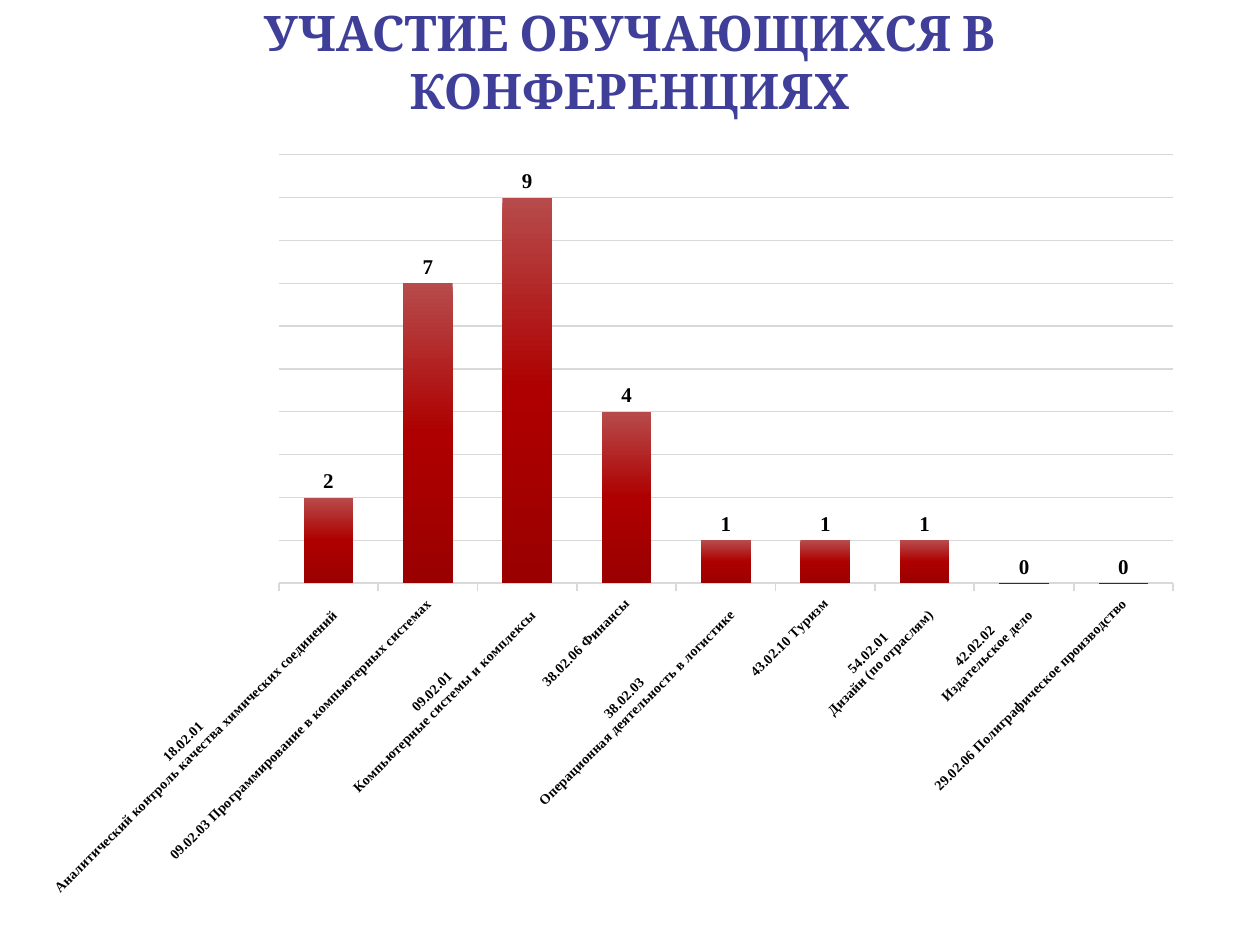
from dataclasses import dataclass

from lxml import etree
from pptx import Presentation
from pptx import util as u
from pptx.chart.data import CategoryChartData
from pptx.dml.color import RGBColor
from pptx.enum import chart as c
from pptx.enum import text as t
from pptx.oxml import parse_xml
from pptx.oxml.ns import nsdecls, qn

TITLE_COLOR = RGBColor(0x3F, 0x3F, 0x9A)
TITLE_OUTLINE = RGBColor(0xA5, 0x85, 0xB1)
GRID = RGBColor(0xD9, 0xD9, 0xD9)
BLACK = RGBColor(0, 0, 0)
BAR_STOPS = (
    (0, RGBColor(0xB7, 0x4B, 0x4B)),
    (50, RGBColor(0xAE, 0x00, 0x00)),
    (100, RGBColor(0x9B, 0x00, 0x00)),
)
CHART_FONT = "Times New Roman"
CHART_WIDTH = u.Cm(23.8)
CHART_HEIGHT = u.Cm(15.54)


@dataclass(frozen=True)
class Specialty:
    name: str
    entries: int


SPECIALTIES = (
    Specialty("18.02.01 \nАналитический контроль качества химических соединений", 2),
    Specialty("09.02.03 Программирование в компьютерных системах", 7),
    Specialty("09.02.01 \nКомпьютерные системы и комплексы", 9),
    Specialty("38.02.06 Финансы", 4),
    Specialty("38.02.03 \nОперационная деятельность в логистике", 1),
    Specialty("43.02.10 Туризм", 1),
    Specialty("54.02.01 \nДизайн (по отраслям)", 1),
    Specialty("42.02.02 \nИздательское дело", 0),
    Specialty("29.02.06 Полиграфическое производство", 0),
)


def style_font(font, size: float, name: str, color: RGBColor) -> None:
    font.size = u.Pt(size)
    font.name = name
    font.bold = True
    font.color.rgb = color


def add_title(page, text: str) -> None:
    box = page.shapes.add_textbox(u.Cm(1.26), u.Cm(-0.36), u.Cm(22.86), u.Cm(3.18))
    frame = box.text_frame
    frame.word_wrap = True
    frame.vertical_anchor = t.MSO_ANCHOR.MIDDLE
    para = frame.paragraphs[0]
    para.alignment = t.PP_ALIGN.CENTER
    span = para.add_run()
    span.text = text
    style_font(span.font, 28, "Cambria", TITLE_COLOR)
    outline = parse_xml(
        f'<a:ln {nsdecls("a")} w="{u.Pt(2.25)}"><a:solidFill>'
        f'<a:srgbClr val="{TITLE_OUTLINE}"/></a:solidFill></a:ln>'
    )
    span.font._element.insert(0, outline)


def place_plot(chart, left: u.Length, top: u.Length, width: u.Length, height: u.Length) -> None:
    area = chart._chartSpace.find(f'.//{qn("c:plotArea")}')
    for old in area.findall(qn("c:layout")):
        area.remove(old)
    layout = etree.Element(qn("c:layout"))
    manual = etree.SubElement(layout, qn("c:manualLayout"))
    settings = dict(
        layoutTarget="inner", xMode="edge", yMode="edge",
        x=left / CHART_WIDTH, y=top / CHART_HEIGHT,
        w=width / CHART_WIDTH, h=height / CHART_HEIGHT,
    )
    for tag, value in settings.items():
        etree.SubElement(manual, qn(f"c:{tag}")).set("val", str(value))
    area.insert(0, layout)


def fill_gradient(fill, stops: tuple, angle: int) -> None:
    fill.gradient()
    gradient = fill._fill._gradFill
    stop_list = gradient.find(qn("a:gsLst"))
    for old in list(stop_list):
        stop_list.remove(old)
    for percent, color in stops:
        stop = etree.SubElement(stop_list, qn("a:gs"), pos=str(percent * 1000))
        etree.SubElement(stop, qn("a:srgbClr"), val=str(color))
    gradient.find(qn("a:lin")).set("ang", str(angle * 60000))


def style_axes(chart) -> None:
    categories = chart.category_axis
    categories.major_tick_mark = c.XL_TICK_MARK.OUTSIDE
    categories.has_major_gridlines = False
    categories.format.line.color.rgb = GRID
    categories.format.line.width = u.Pt(1)
    style_font(categories.tick_labels.font, 8, CHART_FONT, BLACK)
    body = categories._element.find(f'{qn("c:txPr")}/{qn("a:bodyPr")}')
    body.set("rot", str(-45 * 60000))
    body.set("vert", "horz")

    values = chart.value_axis
    values.minimum_scale = 0
    values.maximum_scale = 10
    values.major_unit = 1
    values.has_major_gridlines = True
    values.major_gridlines.format.line.color.rgb = GRID
    values.major_gridlines.format.line.width = u.Pt(0.75)
    values.visible = False


def add_column_chart(page, specialties: tuple[Specialty, ...]) -> None:
    data = CategoryChartData()
    data.categories = [item.name for item in specialties]
    data.add_series("Series 1", [item.entries for item in specialties])
    chart = page.shapes.add_chart(
        c.XL_CHART_TYPE.COLUMN_CLUSTERED,
        u.Cm(0.33), u.Cm(2.82), CHART_WIDTH, CHART_HEIGHT, data,
    ).chart
    chart.has_title = False
    chart.has_legend = False
    style_font(chart.font, 10, CHART_FONT, BLACK)
    place_plot(chart, u.Cm(5.29), u.Cm(0.3), u.Cm(18.03), u.Cm(8.64))
    style_axes(chart)

    plot = chart.plots[0]
    plot.vary_by_categories = False
    plot.gap_width = 100
    plot.overlap = -24
    series = plot.series[0]
    fill_gradient(series.format.fill, BAR_STOPS, 90)
    labels = series.data_labels
    labels.show_value = True
    labels.position = c.XL_LABEL_POSITION.OUTSIDE_END
    style_font(labels.font, 12, CHART_FONT, BLACK)


def main() -> None:
    deck = Presentation()
    deck.slide_width = u.Cm(25.4)
    deck.slide_height = u.Cm(19.05)
    page = deck.slides.add_slide(deck.slide_layouts[6])
    add_title(page, "УЧАСТИЕ ОБУЧАЮЩИХСЯ В КОНФЕРЕНЦИЯХ")
    add_column_chart(page, SPECIALTIES)
    deck.save("out.pptx")


if __name__ == "__main__":
    main()
